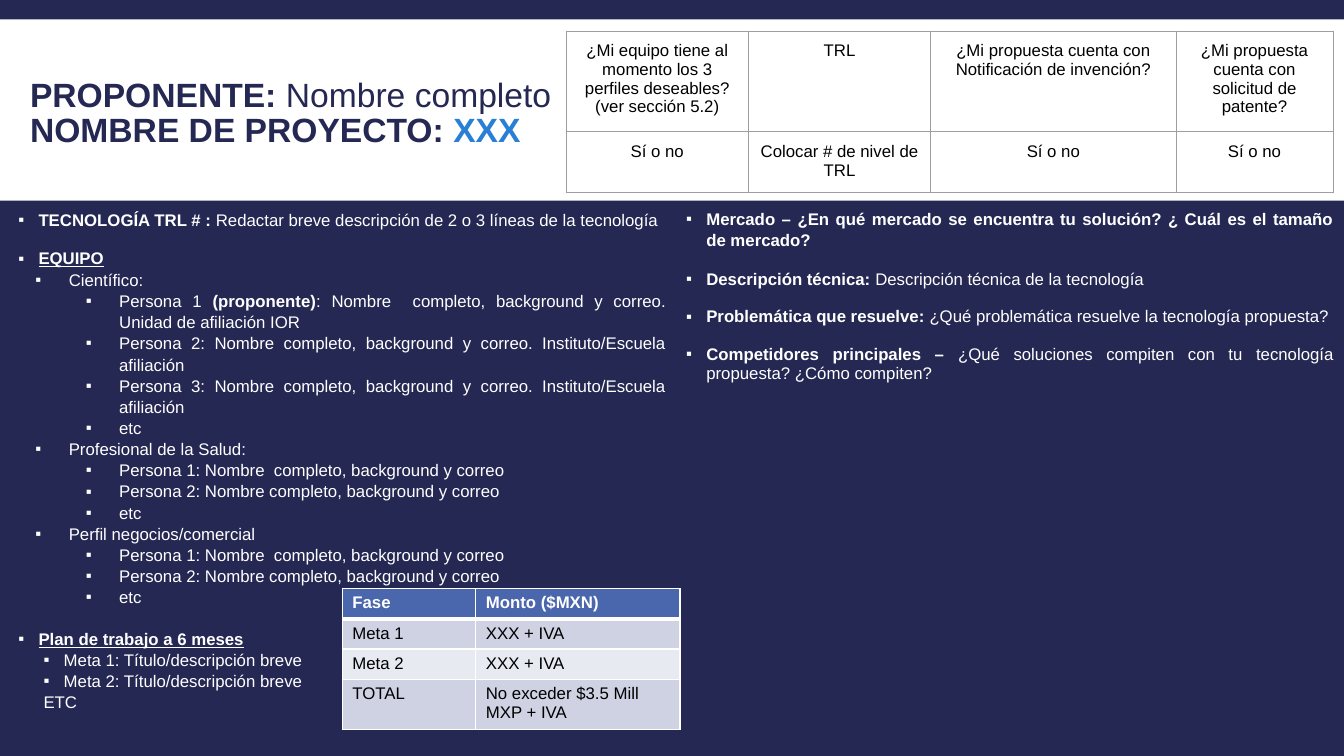
from lxml.etree import SubElement, fromstring
from pptx import Presentation
from pptx.dml.color import RGBColor
from pptx.enum.shapes import MSO_SHAPE
from pptx.enum.text import MSO_ANCHOR, PP_ALIGN
from pptx.oxml.ns import nsdecls, qn
from pptx.util import Inches, Pt

# Grid of 160 columns by 90 rows
WIDTH, HEIGHT = Inches(13.33), Inches(7.5)
COL, ROW = WIDTH / 160, HEIGHT / 90
NAVY, WHITE, BLACK, GREY = "242852", "FFFFFF", "000000", "9E9E9E"
SKY, HEADER_BLUE, BAND_DARK, BAND_LIGHT = "297FD5", "4A66AC", "CED2E2", "E8EAF1"
color = RGBColor.from_string


def write(frame, runs, ink, size=12, align=PP_ALIGN.LEFT, spacing=1.0, before=0, indent=None):
    """Add a paragraph; runs are (text, flags[, colour]), indent is (left, hanging) in inches."""
    first = frame.paragraphs[0]
    paragraph = frame.add_paragraph() if first.runs else first
    if indent:
        left, hanging = indent
        props = paragraph._p.get_or_add_pPr()
        props.set("marL", str(Inches(left)))
        props.set("indent", str(Inches(-hanging)))
        if hanging:
            bullet_color = SubElement(props, qn("a:buClr"))
            SubElement(bullet_color, qn("a:srgbClr")).set("val", WHITE)
            SubElement(props, qn("a:buFont")).set("typeface", "Arial")
            SubElement(props, qn("a:buChar")).set("char", "▪")
    paragraph.alignment = align
    paragraph.line_spacing = spacing
    paragraph.space_before = Pt(before)
    paragraph.font.name, paragraph.font.size = "Arial", Pt(size)
    paragraph.font.color.rgb = color(ink)
    for text, flags, *accent in runs:
        run = paragraph.add_run()
        run.text = text
        if "b" in flags:
            run.font.bold = True
        if "u" in flags:
            run.font.underline = True
        if accent:
            run.font.color.rgb = color(accent[0])


def add_grid(x, y, widths, heights, rows, fills, border, header_rule, align, margin):
    """Add a table; fills and heights go by row, header_rule is the width under the first row."""
    table = slide.shapes.add_table(
        len(heights), len(widths), round(x * COL), round(y * ROW),
        round(sum(widths) * COL), round(sum(heights) * ROW)).table
    for column, width in zip(table.columns, widths):
        column.width = round(width * COL)
    for r, (height, texts, fill) in enumerate(zip(heights, rows, fills)):
        table.rows[r].height = round(height * ROW)
        for c, text in enumerate(texts):
            cell = table.cell(r, c)
            cell.margin_top = cell.margin_bottom = Inches(margin)
            if fill:
                cell.fill.solid()
                cell.fill.fore_color.rgb = color(fill)
            else:
                cell.fill.background()
            is_header = fill == HEADER_BLUE
            write(cell.text_frame, [(text, "b" if is_header else "")],
                  WHITE if is_header else BLACK, align=align)
            ink, thickness = border
            for i, side in enumerate("LRTB"):
                under_header = (r, side) in ((0, "B"), (1, "T"))
                line_width = Pt(header_rule if under_header else thickness)
                cell._tc.get_or_add_tcPr().insert(i, fromstring(
                    f'<a:ln{side} {nsdecls("a")} w="{line_width}"><a:solidFill>'
                    f'<a:srgbClr val="{ink}"/></a:solidFill></a:ln{side}>'))


presentation = Presentation()
presentation.slide_width, presentation.slide_height = WIDTH, HEIGHT
slide = presentation.slides.add_slide(presentation.slide_layouts[6])
slide.background.fill.solid()
slide.background.fill.fore_color.rgb = color(NAVY)

# White header band
band = slide.shapes.add_shape(
    MSO_SHAPE.RECTANGLE, 0, round(2.3 * ROW), WIDTH, round(21.6 * ROW))
band.shadow.inherit = False
band.fill.solid()
band.fill.fore_color.rgb = color(WHITE)
band.line.fill.background()

# Text areas: heading, team and plan, market
areas = [(2.4, 3.7, 156.2, 19.8), (1, 24.5, 79.5, 61.7), (80.5, 24.1, 79.5, 63.6)]
frames = []
for x, y, w, h in areas:
    frame = slide.shapes.add_textbox(
        round(x * COL), round(y * ROW), round(w * COL), round(h * ROW)).text_frame
    frame.word_wrap = True
    frames.append(frame)
heading, team, market = frames

# Heading
heading.vertical_anchor = MSO_ANCHOR.MIDDLE
for runs in (
    [("PROPONENTE: ", "b"), ("Nombre completo", "")],
    [("NOMBRE DE PROYECTO: ", "b"), ("XXX", "b", SKY)],
):
    write(heading, runs, NAVY, size=24, spacing=0.88)

# Team and work plan: runs, indent, line spacing, space before
TOPIC, GROUP, PERSON, GOAL, GOAL_END = (0.2, 0.2), (0.5, 0.33), (1, 0.33), (0.45, 0.2), (0.25, 0)
TIGHT, LOOSE = 0.95, 1.05
team_lines = [
    ([("TECNOLOGÍA TRL # : ", "b"),
      ("Redactar breve descripción de 2 o 3 líneas de la tecnología", "")], TOPIC, TIGHT, 0),
    ([("EQUIPO", "bu")], TOPIC, TIGHT, 14),
]
short_list = ["Persona 1: Nombre  completo, background y correo",
              "Persona 2: Nombre completo, background y correo", "etc"]
scientists = [
    [("Persona 1 ", ""), ("(proponente)", "b"),
     (": Nombre  completo, background y correo. Unidad de afiliación IOR", "")],
    *[[(f"Persona {n}: Nombre completo, background y correo. Instituto/Escuela afiliación", "")]
      for n in (2, 3)],
    [("etc", "")],
]
people = [[(text, "")] for text in short_list]
for group, members in (("Científico:", scientists), ("Profesional de la Salud:", people),
                       ("Perfil negocios/comercial", people)):
    team_lines.append(([(group, "")], GROUP, LOOSE, 0))
    team_lines += [(member, PERSON, LOOSE, 0) for member in members]
team_lines.append(([("Plan de trabajo a 6 meses", "bu")], TOPIC, LOOSE, 14.5))
team_lines += [([(f"Meta {n}: Título/descripción breve", "")], GOAL, LOOSE, 0) for n in (1, 2)]
team_lines.append(([("ETC", "")], GOAL_END, LOOSE, 0))

# Market column
market_lines = [
    ([("Mercado – ¿En qué mercado se encuentra tu solución? ¿ Cuál es el tamaño de mercado?", "b")],
     TOPIC, LOOSE, 0),
    ([("Descripción técnica: ", "b"), ("Descripción técnica de la tecnología", "")],
     TOPIC, TIGHT, 14.5),
    ([("Problemática que resuelve: ", "b"),
      ("¿Qué problemática resuelve la tecnología propuesta?", "")], TOPIC, TIGHT, 13),
    ([("Competidores principales – ", "b"),
      ("¿Qué soluciones compiten con tu tecnología propuesta? ¿Cómo compiten?", "")],
     TOPIC, TIGHT, 13),
]
for frame, lines in ((team, team_lines), (market, market_lines)):
    for runs, indent, spacing, before in lines:
        write(frame, runs, WHITE, align=PP_ALIGN.JUSTIFY, spacing=spacing,
              before=before, indent=indent)

# Budget table
add_grid(40.75, 70.05, [15.9, 24.3], [3.45, 3.45, 3.45, 5.75],
         [("Fase", "Monto ($MXN)"), ("Meta 1", "XXX + IVA"), ("Meta 2", "XXX + IVA"),
          ("TOTAL", "No exceder $3.5 Mill MXP + IVA")],
         [HEADER_BLUE, BAND_DARK, BAND_LIGHT, BAND_DARK], (WHITE, 1), 3, PP_ALIGN.LEFT, 0.05)

# Eligibility table
add_grid(67.4, 3.7, [21.7, 21.7, 29.2, 18.7], [11.4, 6.85],
         [("¿Mi equipo tiene al momento los 3 perfiles deseables? (ver sección 5.2)", "TRL",
           "¿Mi propuesta cuenta con Notificación de invención?",
           "¿Mi propuesta cuenta con solicitud de patente?"),
          ("Sí o no", "Colocar # de nivel de TRL", "Sí o no", "Sí o no")],
         [None, None], (GREY, 0.75), 0.75, PP_ALIGN.CENTER, 0.1)

presentation.save("out.pptx")
